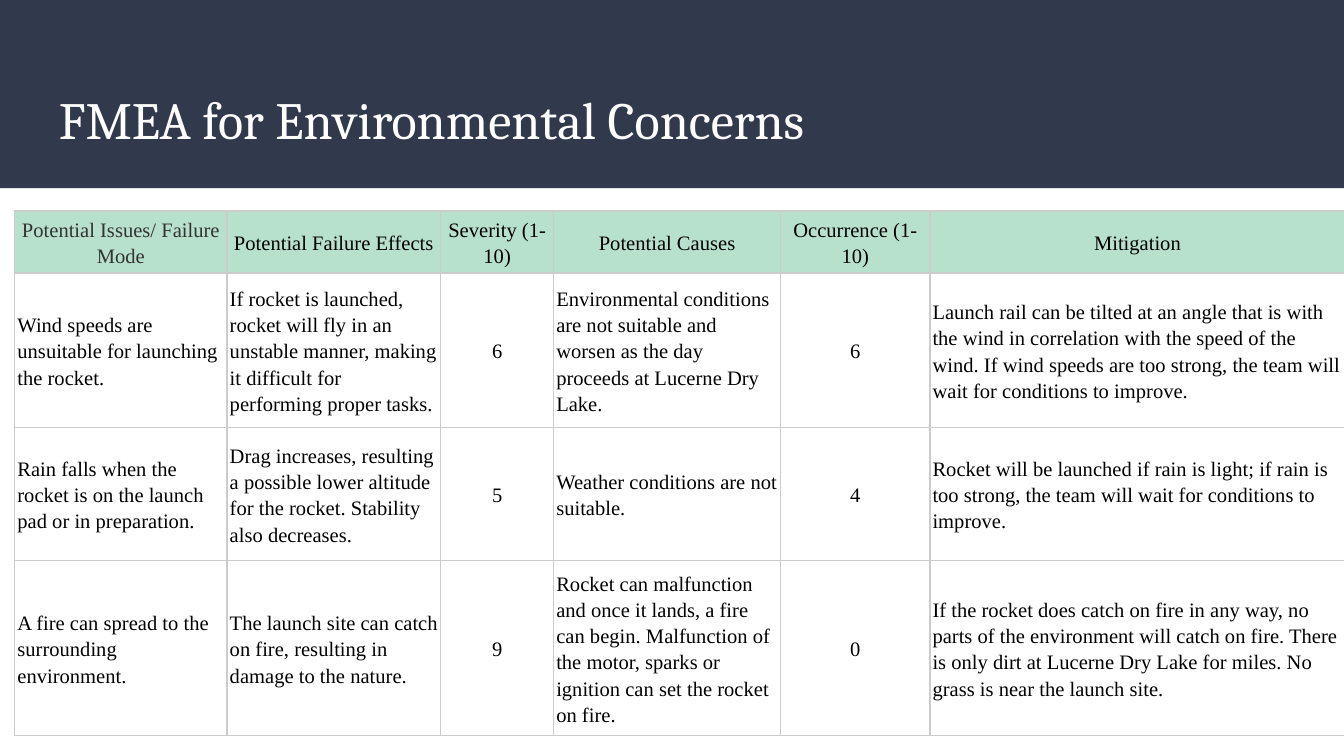
from lxml.etree import SubElement
from pptx import Presentation
from pptx.dml.color import RGBColor
from pptx.enum.shapes import MSO_SHAPE
from pptx.enum.text import MSO_ANCHOR, PP_ALIGN
from pptx.oxml.ns import qn
from pptx.util import Inches, Pt

RECT = MSO_SHAPE.RECTANGLE
MIDDLE = MSO_ANCHOR.MIDDLE
LEFT, CENTER = PP_ALIGN.LEFT, PP_ALIGN.CENTER
SIDES = ("left", "right", "top", "bottom")

NAVY, MINT, GRID = "31394D", "B7E1CD", "CCCCCC"
WHITE, BLACK, GRAY = "FFFFFF", "000000", "333333"

HEAD = {"name": "Cambria", "size": Pt(28)}
BODY = {"name": "Times New Roman", "size": Pt(11), "bold": False}

COLS = (1.58, 1.59, 0.84, 1.69, 1.11, 3.09)
ROWS = (0.43, 1.15, 0.99, 1.3)
SCORES = (2, 4)
DATA = (
    ("Potential Issues/ Failure Mode", "Potential Failure Effects",
     "Severity (1-10)", "Potential Causes", "Occurrence (1-10)", "Mitigation"),
    ("Wind speeds are unsuitable for launching the rocket.",
     "If rocket is launched, rocket will fly in an unstable manner, "
     "making it difficult for performing proper tasks.",
     "6",
     "Environmental conditions are not suitable and worsen as the day "
     "proceeds at Lucerne Dry Lake.",
     "6",
     "Launch rail can be tilted at an angle that is with the wind in "
     "correlation with the speed of the wind. If wind speeds are too strong, "
     "the team will wait for conditions to improve."),
    ("Rain falls when the rocket is on the launch pad or in preparation.",
     "Drag increases, resulting a possible lower altitude for the rocket. "
     "Stability also decreases.",
     "5",
     "Weather conditions are not suitable.",
     "4",
     "Rocket will be launched if rain is light; if rain is too strong, "
     "the team will wait for conditions to improve."),
    ("A fire can spread to the surrounding environment.",
     "The launch site can catch on fire, resulting in damage to the nature.",
     "9",
     "Rocket can malfunction and once it lands, a fire can begin. Malfunction "
     "of the motor, sparks or ignition can set the rocket on fire.",
     "0",
     "If the rocket does catch on fire in any way, no parts of the "
     "environment will catch on fire. There is only dirt at Lucerne Dry Lake "
     "for miles. No grass is near the launch site."),
)


def paint(color, value):
    color.rgb = RGBColor.from_string(value)


def apply(target, values):
    for key, value in values.items():
        setattr(target, key, value)


def pad(target, gap):
    apply(target, {f"margin_{side}": Inches(gap) for side in SIDES})


def write(para, text, style, color):
    run = para.add_run()
    run.text = text
    apply(run.font, style)
    paint(run.font.color, color)


def border(cell):
    props = cell._tc.get_or_add_tcPr()
    for tag in ("a:lnL", "a:lnR", "a:lnT", "a:lnB"):
        line = SubElement(props, qn(tag), w=str(Pt(0.75)))
        fill = SubElement(line, qn("a:solidFill"))
        SubElement(fill, qn("a:srgbClr"), val=GRID)


def banner(slide, left, top, width, height):
    band = slide.shapes.add_shape(
        RECT, Inches(left), Inches(top), Inches(width), Inches(height))
    band.shadow.inherit = False
    band.fill.solid()
    paint(band.fill.fore_color, NAVY)
    band.line.fill.background()
    box = slide.shapes.add_textbox(
        Inches(left + 0.34), Inches(top + 0.54),
        Inches(width - 0.68), Inches(0.68))
    frame = box.text_frame
    apply(frame, {"word_wrap": True, "vertical_anchor": MIDDLE})
    pad(frame, 0.1)
    write(frame.paragraphs[0], "FMEA for Environmental Concerns", HEAD, WHITE)


def entry(cell, text, row, col):
    cell.vertical_anchor = MIDDLE
    pad(cell, 0.02)
    border(cell)
    if row == 0:
        cell.fill.solid()
        paint(cell.fill.fore_color, MINT)
    else:
        cell.fill.background()
    para = cell.text_frame.paragraphs[0]
    center = row == 0 or col in SCORES
    apply(para, {"alignment": CENTER if center else LEFT,
                 "line_spacing": 1.15})
    write(para, text, BODY, GRAY if row == col == 0 else BLACK)


def matrix(slide, left, top, width, height):
    table = slide.shapes.add_table(
        len(ROWS), len(COLS), Inches(left), Inches(top),
        Inches(width), Inches(height)).table
    apply(table, {"first_row": False, "horz_banding": False})
    for col, size in zip(table.columns, COLS):
        col.width = Inches(size)
    for row, size in zip(table.rows, ROWS):
        row.height = Inches(size)
    for r, texts in enumerate(DATA):
        for c, text in enumerate(texts):
            entry(table.cell(r, c), text, r, c)


def main():
    deck = Presentation()
    wide = Inches(10)
    apply(deck, {"slide_width": wide, "slide_height": wide * 9 // 16})
    slide = deck.slides.add_slide(deck.slide_layouts[6])
    banner(slide, 0, 0, 10, 1.4)
    matrix(slide, 0.11, 1.57, sum(COLS), sum(ROWS))
    deck.save("out.pptx")


if __name__ == "__main__":
    main()
